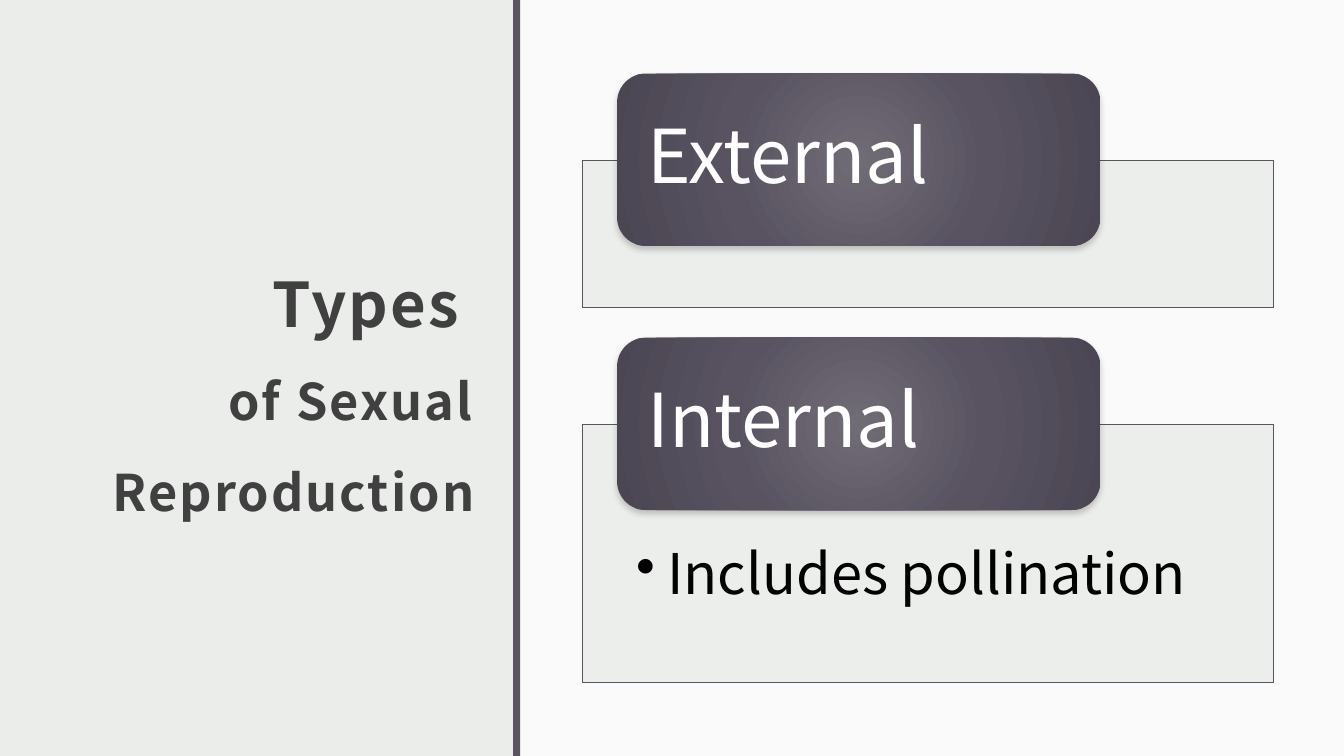
from lxml import etree
from pptx import Presentation
from pptx import util as u
from pptx.dml.color import RGBColor
from pptx.enum import shapes, text
from pptx.oxml import parse_xml
from pptx.oxml.ns import nsdecls, qn

FONT = "Noto Sans CJK JP"
PALE, PLUM, WHITE, BLACK, GREY = "EBEDEB", "595460", "FFFFFF", "000000", "404040"
GRADIENT = ((0, "706C75"), (50, "595361"), (100, "4B4652"))


def rgb(value):
    return RGBColor.from_string(value)


def add_box(s, kind, box, fill, alpha=100):
    sp = s.shapes.add_shape(kind, *map(u.Inches, box))
    sp.shadow.inherit = False
    sp.fill.solid()
    sp.fill.fore_color.rgb = rgb(fill)
    if alpha < 100:
        clr = sp.fill._xPr.find(f".//{qn('a:srgbClr')}")
        etree.SubElement(clr, qn("a:alpha"), val=str(alpha * 1000))
    sp.line.fill.background()
    return sp


def add_run(p, words, size, color, bold=False):
    r = p.add_run()
    r.text = words
    r.font.name, r.font.size, r.font.bold = FONT, u.Pt(size), bold
    r.font.color.rgb = rgb(color)
    return r


def set_frame(tf, anchor, left, top, right, bottom):
    tf.word_wrap = True
    tf.auto_size = text.MSO_AUTO_SIZE.NONE
    tf.vertical_anchor = anchor
    tf.margin_left, tf.margin_top = u.Inches(left), u.Inches(top)
    tf.margin_right, tf.margin_bottom = u.Inches(right), u.Inches(bottom)


def set_paragraph(p, after):
    """Left-align, with the space after given as a percentage."""
    p.alignment = text.PP_ALIGN.LEFT
    p.line_spacing = 0.9
    p.space_after = u.Pt(0)
    spacing = p._p.pPr.find(qn("a:spcAft"))
    spacing.remove(spacing[0])
    etree.SubElement(spacing, qn("a:spcPct"), val=str(after * 1000))


def add_glow(sp):
    """Give a circular gradient and a soft shadow below."""
    stops = "".join(f'<a:gs pos="{pos * 1000}"><a:srgbClr val="{c}"/></a:gs>'
                    for pos, c in GRADIENT)
    grad = parse_xml(
        f'<a:gradFill {nsdecls("a")} rotWithShape="1"><a:gsLst>{stops}</a:gsLst>'
        '<a:path path="circle"><a:fillToRect l="50000" t="50000" r="50000" b="50000"/>'
        '</a:path></a:gradFill>')
    pr = sp._element.spPr
    pr.replace(pr.find(qn("a:solidFill")), grad)
    effects = pr.find(qn("a:effectLst"))
    effects.append(parse_xml(
        f'<a:outerShdw {nsdecls("a")} blurRad="{u.Pt(4.5)}" dist="{u.Pt(2)}" '
        f'dir="5400000" rotWithShape="0"><a:srgbClr val="{BLACK}">'
        '<a:alpha val="20000"/></a:srgbClr></a:outerShdw>'))


def add_background(s, split, width, height):
    s.background.fill.solid()
    s.background.fill.fore_color.rgb = rgb(PALE)
    rect = shapes.MSO_SHAPE.RECTANGLE
    add_box(s, rect, (split, 0, width - split, height), WHITE, 75)
    add_box(s, rect, (split - 0.07, 0, 0.07, height), PLUM)


def add_title(s, box):
    sp = s.shapes.title
    sp.left, sp.top, sp.width, sp.height = map(u.Inches, box)
    tf = sp.text_frame
    set_frame(tf, text.MSO_ANCHOR.MIDDLE, 0.12, 0.12, 0.12, 0.1)
    p = tf.paragraphs[0]
    p.alignment = text.PP_ALIGN.RIGHT
    p.line_spacing = 1.5
    runs = [add_run(p, "Types", 44, GREY, True), add_run(p, " ", 36, GREY, True)]
    p.add_line_break()
    runs.append(add_run(p, "of Sexual Reproduction", 36, GREY, True))
    for r in runs:
        r.font._element.set("spc", "150")


def add_section(s, box, heading, bullet=None):
    """Panel with a heading tab that overlaps its top edge."""
    left, top, width, _ = box
    panel = add_box(s, shapes.MSO_SHAPE.RECTANGLE, box, PALE, 90)
    panel.line.color.rgb = rgb(PLUM)
    panel.line.width = u.Pt(0.75)
    if bullet:
        tf = panel.text_frame
        set_frame(tf, text.MSO_ANCHOR.TOP, 0.53, 1.21, 0.53, 0.31)
        p = tf.paragraphs[0]
        set_paragraph(p, 15)
        pr = p._p.pPr
        pr.set("marL", str(u.Inches(0.31)))
        pr.set("indent", str(u.Inches(-0.31)))
        etree.SubElement(pr, qn("a:buChar"), char="•")
        add_run(p, bullet, 40, BLACK)

    tab_box = (left + 0.34, top - 0.86, width * 0.7, 1.71)
    tab = add_box(s, shapes.MSO_SHAPE.ROUNDED_RECTANGLE, tab_box, PLUM)
    add_glow(tab)
    tf = tab.text_frame
    set_frame(tf, text.MSO_ANCHOR.MIDDLE, 0.22, 0, 0.22, 0)
    set_paragraph(tf.paragraphs[0], 35)
    add_run(tf.paragraphs[0], heading, 53, WHITE)


def main():
    width, height = 13.33, 7.5
    prs = Presentation()
    prs.slide_width, prs.slide_height = u.Inches(width), u.Inches(height)
    s = prs.slides.add_slide(prs.slide_layouts[5])
    add_background(s, 5.16, width, height)
    add_title(s, (0.74, 2.26, 4.09, 2.91))
    add_section(s, (5.78, 1.59, 6.85, 1.46), "External")
    add_section(s, (5.78, 4.21, 6.85, 2.56), "Internal", "Includes pollination")
    prs.save("out.pptx")


if __name__ == "__main__":
    main()
